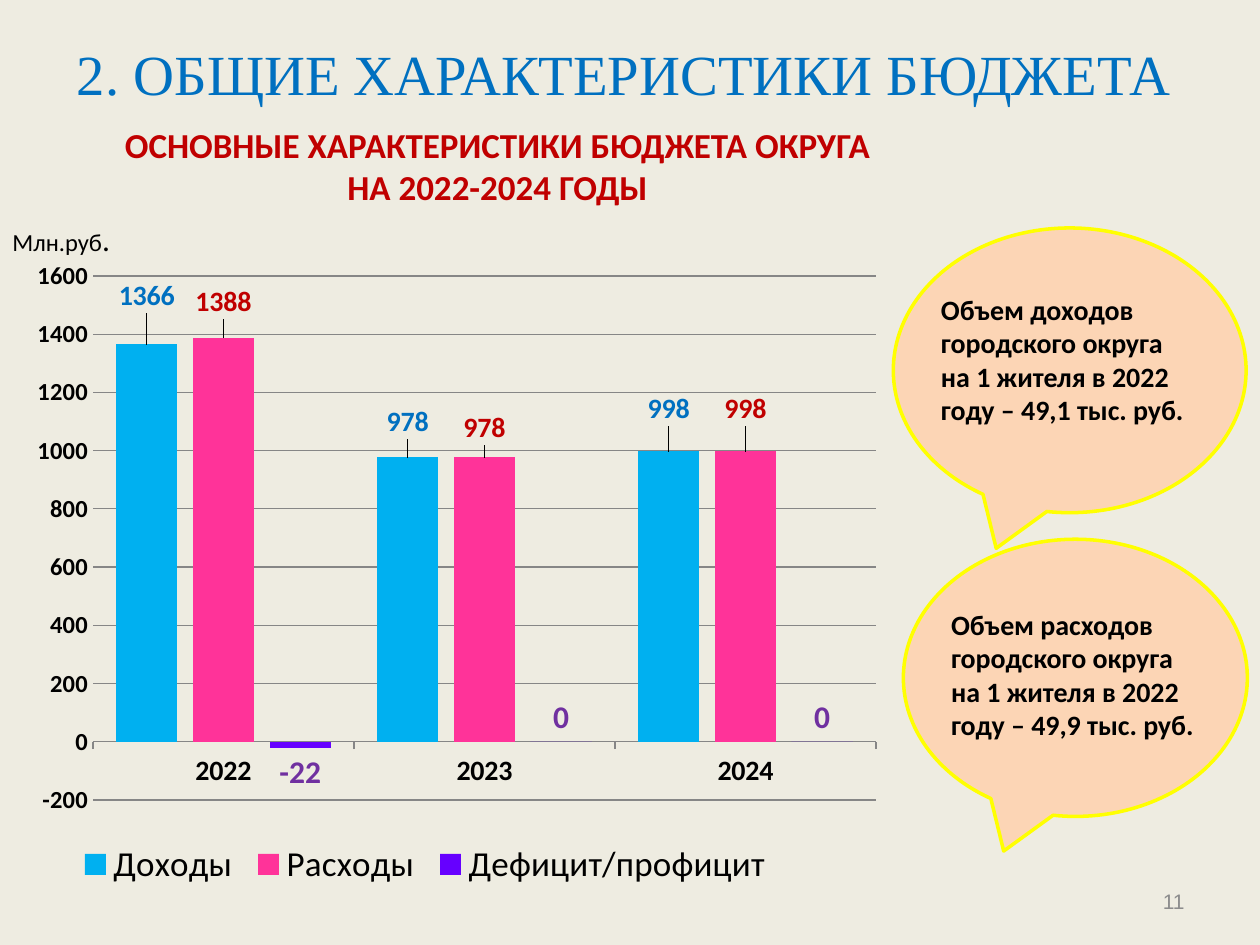
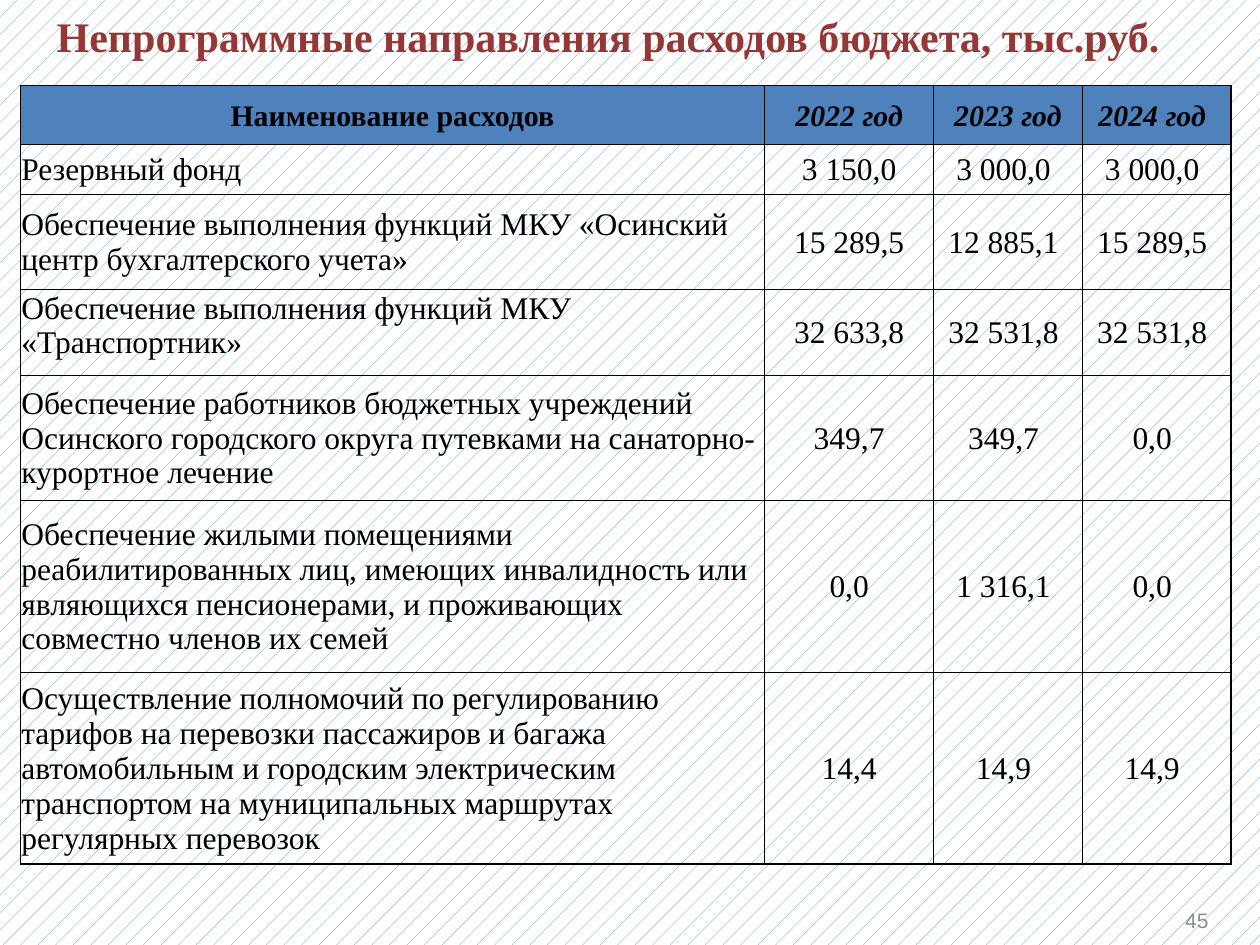
from lxml import etree
from pptx import Presentation
from pptx.chart.data import CategoryChartData
from pptx.dml.color import RGBColor
from pptx.enum.chart import XL_CHART_TYPE, XL_LABEL_POSITION, XL_LEGEND_POSITION, XL_TICK_MARK
from pptx.enum.dml import MSO_PATTERN
from pptx.enum.shapes import MSO_SHAPE
from pptx.enum.text import MSO_ANCHOR, MSO_AUTO_SIZE, PP_ALIGN
from pptx.oxml.ns import qn
from pptx.util import Inches, Pt

LEFT, CENTER, RIGHT = PP_ALIGN.LEFT, PP_ALIGN.CENTER, PP_ALIGN.RIGHT
TOP, MIDDLE = MSO_ANCHOR.TOP, MSO_ANCHOR.MIDDLE
OUTSIDE_END = XL_LABEL_POSITION.OUTSIDE_END
SANS, SERIF, NUMBER_FONT = "Calibri", "Times New Roman", "Arial"
TITLE_ONLY = 5

COLORS = {
    "black": "000000", "white": "FFFFFF", "paper": "EEECE1", "blue": "0070C0", "red": "C00000",
    "brown": "953735", "accent": "4F81BD", "peach": "FCD5B5", "yellow": "FFFF00",
    "gray": "8C8C8C", "grid": "868686", "sky": "00B0F0", "pink": "FF3399",
    "violet": "6600FF", "purple": "7030A0",
}

# Slide 1: budget overview
OVERVIEW_TITLE = "2. ОБЩИЕ ХАРАКТЕРИСТИКИ БЮДЖЕТА"
CHART_HEADING = ["ОСНОВНЫЕ ХАРАКТЕРИСТИКИ БЮДЖЕТА ОКРУГА", "НА 2022-2024 ГОДЫ"]
YEARS = ["2022", "2023", "2024"]
# name, values, bar colour, label colour, label size, label shifts as shares of the chart
SERIES = [
    ("Доходы", (1366, 978, 998), "sky", "blue", 16, ((0, -0.04), (0, -0.02), (0, -0.03))),
    ("Расходы", (1388, 978, 998), "pink", "red", 16, ((0, -0.02), (0, -0.01), (0, -0.03))),
    ("Дефицит/профицит", (-22, 0, 0), "violet", "purple", 18, ()),
]
PLOT_AREA = (0.085, 0.035, 0.884, 0.806)
LEGEND_AREA = (0.06, 0.9, 0.8, 0.08)
# callout box, text box, lines
CALLOUTS = [
    ((7.17, 4.28, 2.73, 2.2), (7.45, 4.77, 2.3, 1.2),
     ["Объем расходов", "городского округа", "на 1 жителя в 2022", "году – 49,9 тыс. руб."]),
    ((7.09, 1.81, 2.8, 2.26), (7.37, 2.27, 2.3, 1.2),
     ["Объем доходов", "городского округа", "на 1 жителя в 2022", "году – 49,1 тыс. руб."]),
]

# Slide 2: spending outside programmes
SPENDING_TITLE = "Непрограммные направления расходов бюджета, тыс.руб."
SPENDING = [
    ("Наименование расходов", "2022 год", "2023 год", "2024 год"),
    ("Резервный фонд", "3 150,0", "3 000,0", "3 000,0"),
    ("Обеспечение выполнения функций МКУ «Осинский центр бухгалтерского учета»",
     "15 289,5", "12 885,1", "15 289,5"),
    ("Обеспечение выполнения функций МКУ «Транспортник»", "32 633,8", "32 531,8", "32 531,8"),
    ("Обеспечение работников бюджетных учреждений Осинского городского округа путевками "
     "на санаторно-курортное лечение", "349,7", "349,7", "0,0"),
    ("Обеспечение жилыми помещениями реабилитированных лиц, имеющих инвалидность или "
     "являющихся пенсионерами, и проживающих совместно членов их семей",
     "0,0", "1 316,1", "0,0"),
    ("Осуществление полномочий по регулированию тарифов на перевозки пассажиров и багажа "
     "автомобильным и городским электрическим транспортом на муниципальных маршрутах "
     "регулярных перевозок", "14,4", "14,9", "14,9"),
]
COLUMN_WIDTHS = (5.91, 1.34, 1.18, 1.18)
ROW_HEIGHTS = (0.47, 0.39, 0.76, 0.68, 0.99, 1.37, 1.52)
TOP_ALIGNED_ROW = 3
THICK_LINES_BELOW = (2, len(SPENDING) - 1)


def rgb(name):
    return RGBColor.from_string(COLORS[name])


def inches(box):
    return [Inches(length) for length in box]


def style_font(font, size, color="black", name=SANS, bold=False, italic=False):
    font.size, font.name, font.bold, font.italic = Pt(size), name, bold, italic
    font.color.rgb = rgb(color)


def write_lines(frame, lines, align=LEFT, anchor=TOP):
    """Write each line, a list of (text, font settings) runs, as one paragraph."""
    frame.word_wrap = True
    frame.vertical_anchor = anchor
    for index, runs in enumerate(lines):
        paragraph = frame.add_paragraph() if index else frame.paragraphs[0]
        paragraph.alignment = align
        for text, settings in runs:
            run = paragraph.add_run()
            run.text = text
            style_font(run.font, **settings)


def add_text(slide, box, lines, align=LEFT, anchor=TOP):
    write_lines(slide.shapes.add_textbox(*inches(box)).text_frame, lines, align, anchor)


def set_title(slide, box, text, align, **settings):
    title = slide.shapes.title
    title.left, title.top, title.width, title.height = inches(box)
    title.text_frame.auto_size = MSO_AUTO_SIZE.NONE
    write_lines(title.text_frame, [[(text, dict(name=SERIF, **settings))]], align, MIDDLE)


def add_slide_number(slide, box, number):
    settings = dict(size=12, color="gray", name=NUMBER_FONT)
    add_text(slide, box, [[(number, settings)]], RIGHT, MIDDLE)


def manual_layout(**values):
    layout = etree.Element(qn("c:layout"))
    manual = etree.SubElement(layout, qn("c:manualLayout"))
    for tag, value in values.items():
        etree.SubElement(manual, qn("c:" + tag)).set("val", str(value))
    return layout


def area_layout(area, **target):
    x, y, w, h = area
    return manual_layout(**target, xMode="edge", yMode="edge", x=x, y=y, w=w, h=h)


def replace_layout(parent, layout, index):
    for old in parent.findall(qn("c:layout")):
        parent.remove(old)
    parent.insert(index, layout)


def style_axes(chart):
    value_axis, category_axis = chart.value_axis, chart.category_axis
    value_axis.minimum_scale, value_axis.maximum_scale, value_axis.major_unit = -200, 1600, 200
    value_axis.major_tick_mark = XL_TICK_MARK.NONE
    value_axis.format.line.fill.background()
    category_axis.major_tick_mark = XL_TICK_MARK.OUTSIDE
    style_font(value_axis.tick_labels.font, 14, bold=True)
    style_font(category_axis.tick_labels.font, 16, bold=True)
    for line in (value_axis.major_gridlines.format.line, category_axis.format.line):
        line.color.rgb = rgb("grid")
        line.width = Pt(0.75)


def add_budget_chart(slide):
    data = CategoryChartData()
    data.categories = YEARS
    for name, values, *_ in SERIES:
        data.add_series(name, values)
    frame = slide.shapes.add_chart(
        XL_CHART_TYPE.COLUMN_CLUSTERED, *inches((0.14, 2.01, 7.03, 5.16)), data)
    chart = frame.chart
    style_font(chart.font, 10)
    chart.has_title = False
    style_axes(chart)
    plot = chart.plots[0]
    plot.gap_width, plot.overlap, plot.vary_by_categories = 75, -25, False

    for series, (_, _, fill, label_color, size, shifts) in zip(plot.series, SERIES):
        series.format.fill.solid()
        series.format.fill.fore_color.rgb = rgb(fill)
        series.invert_if_negative = False
        labels = series.data_labels
        labels.show_value = True
        point_labels = [series.points[index].data_label for index in range(len(shifts))]
        for label in [labels, *point_labels]:
            style_font(label.font, size, label_color, bold=True)
            label.position = OUTSIDE_END
    all_shifts = [shift for *_, shifts in SERIES for shift in shifts]
    for label, (x, y) in zip(chart.element.iter(qn("c:dLbl")), all_shifts):
        label.insert(1, manual_layout(x=x, y=y))

    chart.has_legend = True
    chart.legend.position = XL_LEGEND_POSITION.BOTTOM
    chart.legend.include_in_layout = False
    style_font(chart.legend.font, 20)
    plot_area = next(chart.element.iter(qn("c:plotArea")))
    replace_layout(plot_area, area_layout(PLOT_AREA, layoutTarget="inner"), 0)
    legend = next(chart.element.iter(qn("c:legend")))
    replace_layout(legend, area_layout(LEGEND_AREA), 1)


def add_callout(slide, box):
    callout = slide.shapes.add_shape(MSO_SHAPE.OVAL_CALLOUT, *inches(box))
    callout.shadow.inherit = False
    callout.fill.solid()
    callout.fill.fore_color.rgb = rgb("peach")
    callout.line.color.rgb = rgb("yellow")
    callout.line.width = Pt(2)


def build_overview(presentation):
    slide = presentation.slides.add_slide(presentation.slide_layouts[TITLE_ONLY])
    slide.background.fill.solid()
    slide.background.fill.fore_color.rgb = rgb("paper")
    for box, _, _ in CALLOUTS:
        add_callout(slide, box)
    set_title(slide, (0, 0.22, 9.9, 0.72), OVERVIEW_TITLE, CENTER, size=32.4, color="blue")
    add_slide_number(slide, (9.02, 6.95, 0.48, 0.4), "11")
    heading = dict(size=20, color="red", bold=True)
    add_text(slide, (0.8, 0.93, 6.3, 0.77), [[(line, heading)] for line in CHART_HEADING], CENTER)
    add_budget_chart(slide)
    add_text(slide, (0, 1.7, 1.2, 0.4), [[("Млн.руб", dict(size=14)), (".", dict(size=18))]])
    for _, text_box, lines in CALLOUTS:
        add_text(slide, text_box, [[(line, dict(size=16, bold=True))] for line in lines])


def set_borders(cell, widths):
    """Draw black cell borders; widths are points for left, right, top, bottom."""
    properties = cell._tc.get_or_add_tcPr()
    for index, (side, width) in enumerate(zip("LRTB", widths)):
        line = etree.Element(qn("a:ln" + side), w=str(Pt(width)))
        fill = etree.SubElement(line, qn("a:solidFill"))
        etree.SubElement(fill, qn("a:srgbClr"), val=COLORS["black"])
        properties.insert(index, line)


def fill_cell(cell, text, row, column):
    header = row == 0
    last_column = column == len(COLUMN_WIDTHS) - 1
    if header:
        cell.fill.solid()
        cell.fill.fore_color.rgb = rgb("accent")
    else:
        cell.fill.background()
    cell.margin_left = cell.margin_top = cell.margin_right = Inches(0.01)
    cell.margin_bottom = 0
    if last_column or (column == 2 and not header):
        cell.margin_right = Inches(0.08)
    settings = dict(size=17 if header else 18, name=SERIF, bold=header,
                    italic=header and column > 0)
    align = CENTER if header or column else LEFT
    write_lines(cell.text_frame, [[(text, settings)]], align)
    cell.vertical_anchor = TOP if (row, column) == (TOP_ALIGNED_ROW, 0) else MIDDLE
    set_borders(cell, (0.5, 1 if last_column else 0.5,
                       1 if row - 1 in THICK_LINES_BELOW else 0.5,
                       1 if row in THICK_LINES_BELOW else 0.5))


def build_spending(presentation):
    slide = presentation.slides.add_slide(presentation.slide_layouts[TITLE_ONLY])
    fill = slide.background.fill
    fill.patterned()
    fill.pattern = MSO_PATTERN.PERCENT_5
    fill.fore_color.rgb = rgb("accent")
    fill.back_color.rgb = rgb("white")
    set_title(slide, (0.35, 0.03, 9.21, 0.51), SPENDING_TITLE, LEFT,
              size=24, color="brown", bold=True)
    box = (0.16, 0.68, sum(COLUMN_WIDTHS), sum(ROW_HEIGHTS))
    table = slide.shapes.add_table(len(ROW_HEIGHTS), len(COLUMN_WIDTHS), *inches(box)).table
    table.first_row = table.horz_banding = False
    for column, width in zip(table.columns, COLUMN_WIDTHS):
        column.width = Inches(width)
    for row, height in zip(table.rows, ROW_HEIGHTS):
        row.height = Inches(height)
    for row, texts in enumerate(SPENDING):
        for column, text in enumerate(texts):
            fill_cell(table.cell(row, column), text, row, column)
    add_slide_number(slide, (8.86, 7.1, 0.83, 0.4), "45")


def main():
    presentation = Presentation()
    presentation.slide_width, presentation.slide_height = Inches(10), Inches(7.5)
    build_overview(presentation)
    build_spending(presentation)
    presentation.save("out.pptx")


if __name__ == "__main__":
    main()
